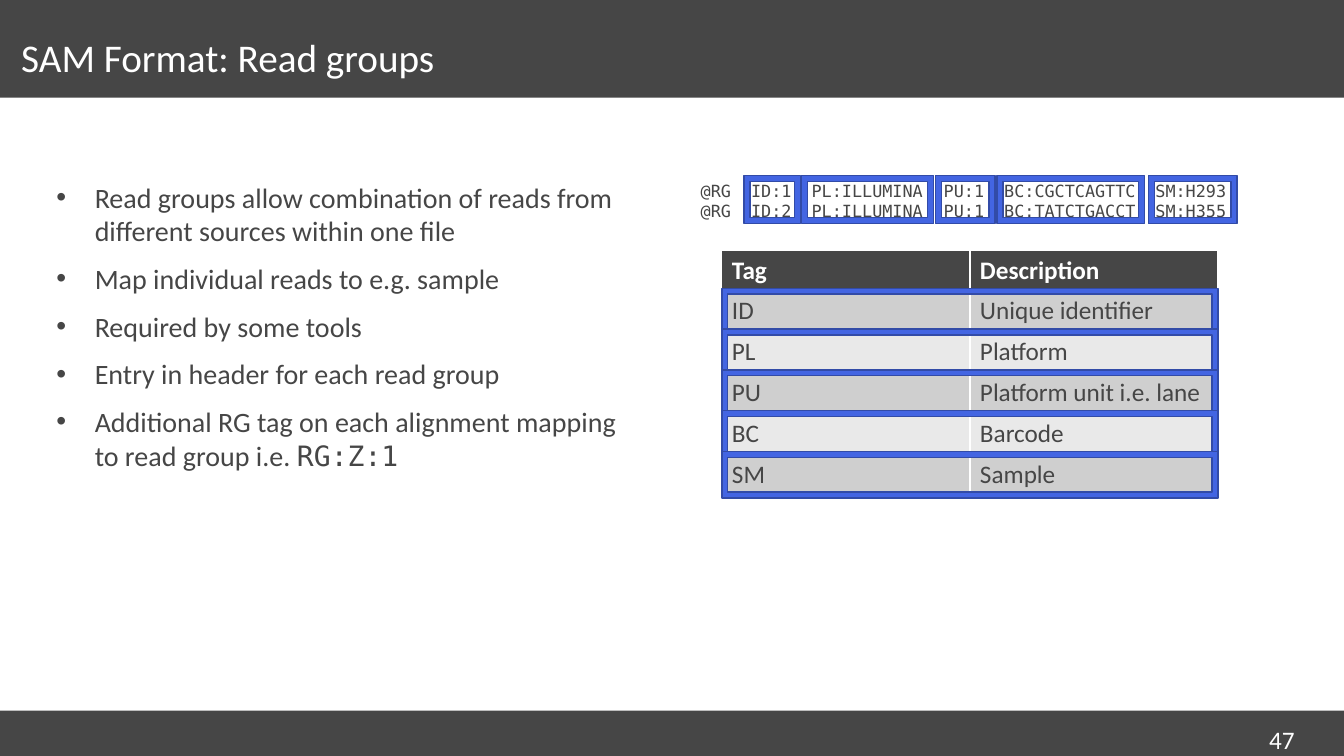
from lxml import etree
from pptx import Presentation
from pptx.dml.color import RGBColor
from pptx.enum import shapes, text
from pptx.oxml import ns
from pptx.util import Inches, Pt

DARK = RGBColor(0x46, 0x46, 0x46)
WHITE = RGBColor(0xFF, 0xFF, 0xFF)
BANDS = [RGBColor(0xE9, 0xE9, 0xE9), RGBColor(0xCF, 0xCF, 0xCF)]
BLUE = RGBColor(0x43, 0x65, 0xE2)
NAVY = RGBColor(0x32, 0x4B, 0xA7)
SANS, MONO = "Calibri", "DejaVu Sans Mono"

deck = Presentation()
deck.slide_width, deck.slide_height = Inches(13.33), Inches(7.5)
slide = deck.slides.add_slide(deck.slide_layouts[6])


def style(font, size, color, name=SANS, bold=False):
    look = {"size": Pt(size), "name": name, "bold": bold}
    for key, value in look.items():
        setattr(font, key, value)
    font.color.rgb = color


def add_box(left, top, width, height, inset=0):
    box = slide.shapes.add_textbox(*map(Inches, (left, top, width, height)))
    frame = box.text_frame
    frame.word_wrap = True
    frame.margin_left = frame.margin_right = Inches(inset)
    return frame


# Header and footer bars
for top, height in [(0, 0.97), (7.05, 0.45)]:
    bar = slide.shapes.add_shape(shapes.MSO_SHAPE.RECTANGLE, 0, Inches(top),
                                 deck.slide_width, Inches(height))
    bar.shadow.inherit = False
    bar.fill.solid()
    bar.fill.fore_color.rgb = DARK
    bar.line.fill.background()

# Title and page number
title = add_box(0.21, 0.23, 11.52, 0.75)
title.vertical_anchor = text.MSO_ANCHOR.MIDDLE
title.text = "SAM Format: Read groups"
title.paragraphs[0].line_spacing = 0.8
style(title.paragraphs[0].font, 28, WHITE)
page = add_box(12.49, 7.14, 0.7, 0.25, 0.1)
page.text = "47"
style(page.paragraphs[0].font, 18, WHITE)

# Bullet list
points = [
    "Read groups allow combination of reads from different sources within one file",
    "Map individual reads to e.g. sample",
    "Required by some tools",
    "Entry in header for each read group",
    "Additional RG tag on each alignment mapping to read group i.e. ",
]
body = add_box(0.56, 1.74, 5.82, 5.04)
for i, point in enumerate(points):
    para = body.add_paragraph() if i else body.paragraphs[0]
    props = para._p.get_or_add_pPr()
    props.set("marL", str(Inches(0.38)))
    props.set("indent", str(-Inches(0.38)))
    etree.SubElement(props, ns.qn("a:buFont"), typeface="Arial")
    etree.SubElement(props, ns.qn("a:buChar"), char="•")
    para.space_before, para.space_after = Pt(6 if i else 0), Pt(4)
    run = para.add_run()
    run.text = point
    style(run.font, 20, DARK)
code = para.add_run()
code.text = "RG:Z:1"
style(code.font, 20, DARK, MONO)

# Header lines, with tab stops as columns
lines = ["@RG\tID:1\tPL:ILLUMINA\tPU:1\tBC:CGCTCAGTTC\tSM:H293",
         "@RG\tID:2\tPL:ILLUMINA\tPU:1\tBC:TATCTGACCT\tSM:H355"]
head = add_box(6.95, 1.74, 5.82, 0.5).paragraphs[0]
tabs = etree.SubElement(head._p.get_or_add_pPr(), ns.qn("a:tabLst"))
for stop in [0.5, 1.1, 2.41, 3.01, 4.51]:
    etree.SubElement(tabs, ns.qn("a:tab"), pos=str(Inches(stop)), algn="l")
for i, line in enumerate(lines):
    if i:
        head.add_line_break()
    run = head.add_run()
    run.text = line
    style(run.font, 12, DARK, MONO)

# Tag table
rows = [("Tag", "Description"), ("ID", "Unique identifier"), ("PL", "Platform"),
        ("PU", "Platform unit i.e. lane"), ("BC", "Barcode"), ("SM", "Sample")]
table = slide.shapes.add_table(len(rows), 2, Inches(7.16), Inches(2.48),
                               Inches(4.92), Inches(2.43)).table
for r, row in enumerate(rows):
    for c, word in enumerate(row):
        cell = table.cell(r, c)
        cell.text = word
        cell.fill.solid()
        cell.fill.fore_color.rgb = BANDS[r % 2] if r else DARK
        style(cell.text_frame.paragraphs[0].font, 18,
              DARK if r else WHITE, bold=r == 0)

# Frames that pair each field with its table row
fields = [(7.38, 0.56), (7.95, 1.31), (9.28, 0.59), (9.89, 1.46), (11.39, 0.88)]
for i, (left, width) in enumerate(fields):
    pair = slide.shapes.add_group_shape()
    for spot in [(left, 1.74, width, 0.48), (7.16, 2.86 + 0.405 * i, 4.92, 0.46)]:
        mark = pair.shapes.add_shape(shapes.MSO_SHAPE.FRAME, *map(Inches, spot))
        mark.shadow.inherit = False
        mark.fill.solid()
        mark.fill.fore_color.rgb = BLUE
        mark.line.color.rgb = NAVY
        mark.line.width = Pt(1)

deck.save("out.pptx")
